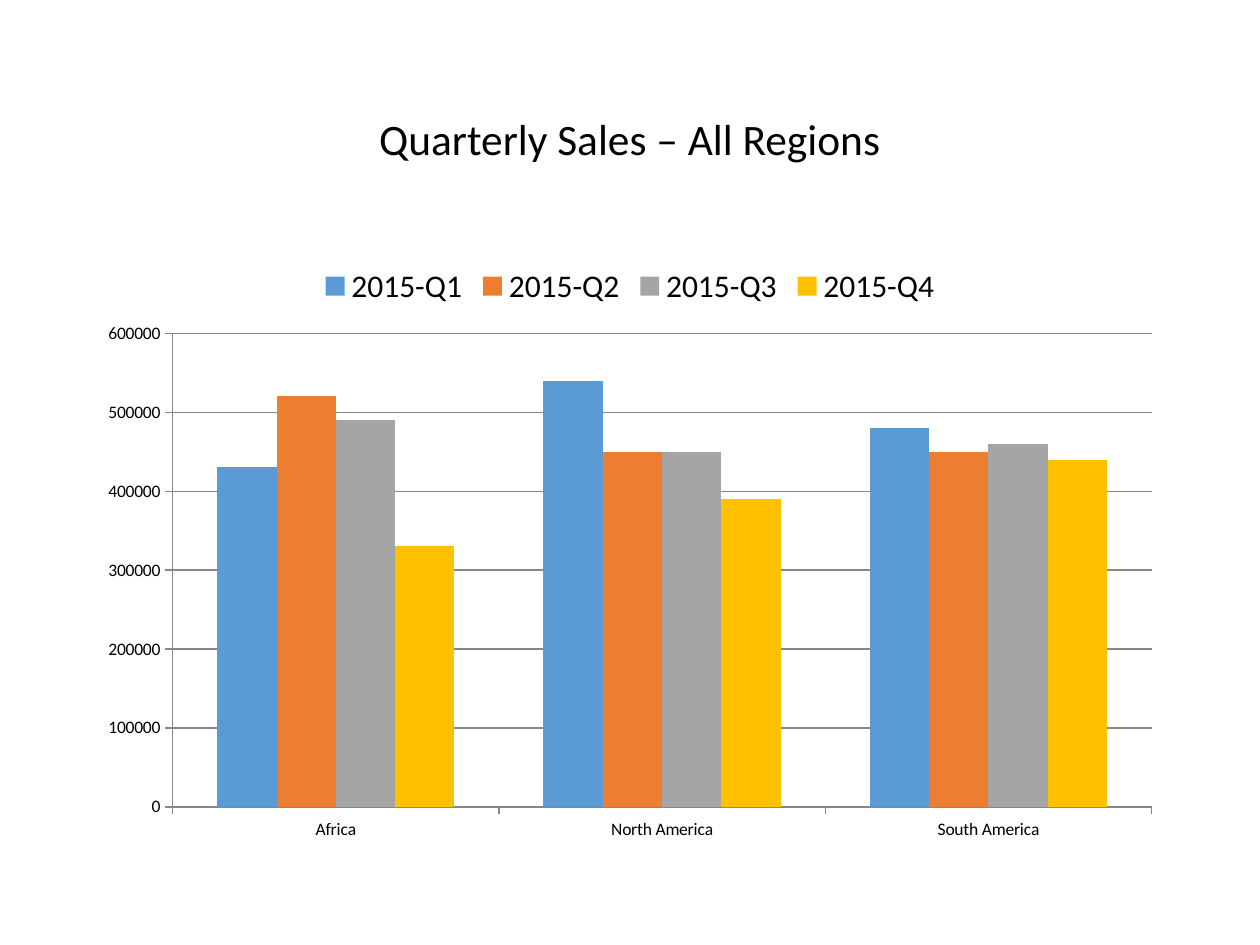
from pptx import Presentation
from pptx.chart.data import CategoryChartData
from pptx.dml.color import RGBColor
from pptx.enum.chart import XL_CHART_TYPE as ChartType
from pptx.enum.chart import XL_LEGEND_POSITION as LegendPosition
from pptx.enum.chart import XL_TICK_MARK as TickMark
from pptx.enum.text import MSO_ANCHOR as Anchor
from pptx.enum.text import MSO_AUTO_SIZE as AutoSize
from pptx.enum.text import PP_ALIGN as Align
from pptx.util import Pt

BLACK = RGBColor(0x00, 0x00, 0x00)
GRID_GRAY = RGBColor(0x87, 0x87, 0x87)
BLUE = RGBColor(0x5B, 0x9B, 0xD5)
ORANGE = RGBColor(0xED, 0x7D, 0x31)
GRAY = RGBColor(0xA5, 0xA5, 0xA5)
GOLD = RGBColor(0xFF, 0xC0, 0x00)
FONT = "Calibri"

REGIONS = ("Africa", "North America", "South America")
QUARTERS = (
    ("2015-Q1", (430000, 540000, 480000), BLUE),
    ("2015-Q2", (520000, 450000, 450000), ORANGE),
    ("2015-Q3", (490000, 450000, 460000), GRAY),
    ("2015-Q4", (330000, 390000, 440000), GOLD),
)


def style_font(font, size):
    """Set the shared typeface and colour at the given size."""
    font.name = FONT
    font.size = Pt(size)
    font.color.rgb = BLACK


def style_line(line):
    """Give an axis or gridline its thin gray stroke."""
    line.color.rgb = GRID_GRAY
    line.width = Pt(0.75)


def place_title(slide, left, top, width, height):
    """Move the title placeholder into the box and fill it."""
    title = slide.shapes.title
    title.left, title.top = Pt(left), Pt(top)
    title.width, title.height = Pt(width), Pt(height)
    frame = title.text_frame
    frame.auto_size = AutoSize.NONE
    frame.vertical_anchor = Anchor.MIDDLE
    heading = frame.paragraphs[0]
    heading.alignment = Align.CENTER
    heading.line_spacing = 0.9
    run = heading.add_run()
    run.text = "Quarterly Sales – All Regions"
    style_font(run.font, 24.8)


def place_sales_chart(slide, left, top, width, height):
    """Draw quarterly sales by region as clustered columns in the box."""
    sales = CategoryChartData(number_format="General")
    sales.categories = REGIONS
    for quarter, amounts, _ in QUARTERS:
        sales.add_series(quarter, amounts)
    chart = slide.shapes.add_chart(
        ChartType.COLUMN_CLUSTERED,
        Pt(left), Pt(top), Pt(width), Pt(height), sales,
    ).chart
    chart.has_title = False
    style_font(chart.font, 10)

    chart.has_legend = True
    chart.legend.position = LegendPosition.TOP
    chart.legend.include_in_layout = False
    style_font(chart.legend.font, 18)

    columns = chart.plots[0]
    columns.gap_width = 150
    columns.overlap = 0
    columns.vary_by_categories = False
    for series, (_, _, color) in zip(columns.series, QUARTERS):
        series.format.fill.solid()
        series.format.fill.fore_color.rgb = color
        series.invert_if_negative = False

    for axis in (chart.category_axis, chart.value_axis):
        axis.major_tick_mark = TickMark.OUTSIDE
        axis.minor_tick_mark = TickMark.NONE
        style_font(axis.tick_labels.font, 10)
        style_line(axis.format.line)
    amount_axis = chart.value_axis
    amount_axis.minimum_scale = 0
    amount_axis.maximum_scale = 600000
    amount_axis.major_unit = 100000
    amount_axis.has_major_gridlines = True
    style_line(amount_axis.major_gridlines.format.line)


def main():
    """Build and save the sales slide."""
    deck = Presentation()
    deck.slide_width, deck.slide_height = Pt(720), Pt(540)
    slide = deck.slides.add_slide(deck.slide_layouts[5])
    margin = 49.5
    content_width = 720 - 2 * margin
    place_title(slide, margin, 28.75, content_width, 104.4)
    place_sales_chart(slide, margin, 143.75, content_width, 342.6)
    deck.save("out.pptx")


if __name__ == "__main__":
    main()
